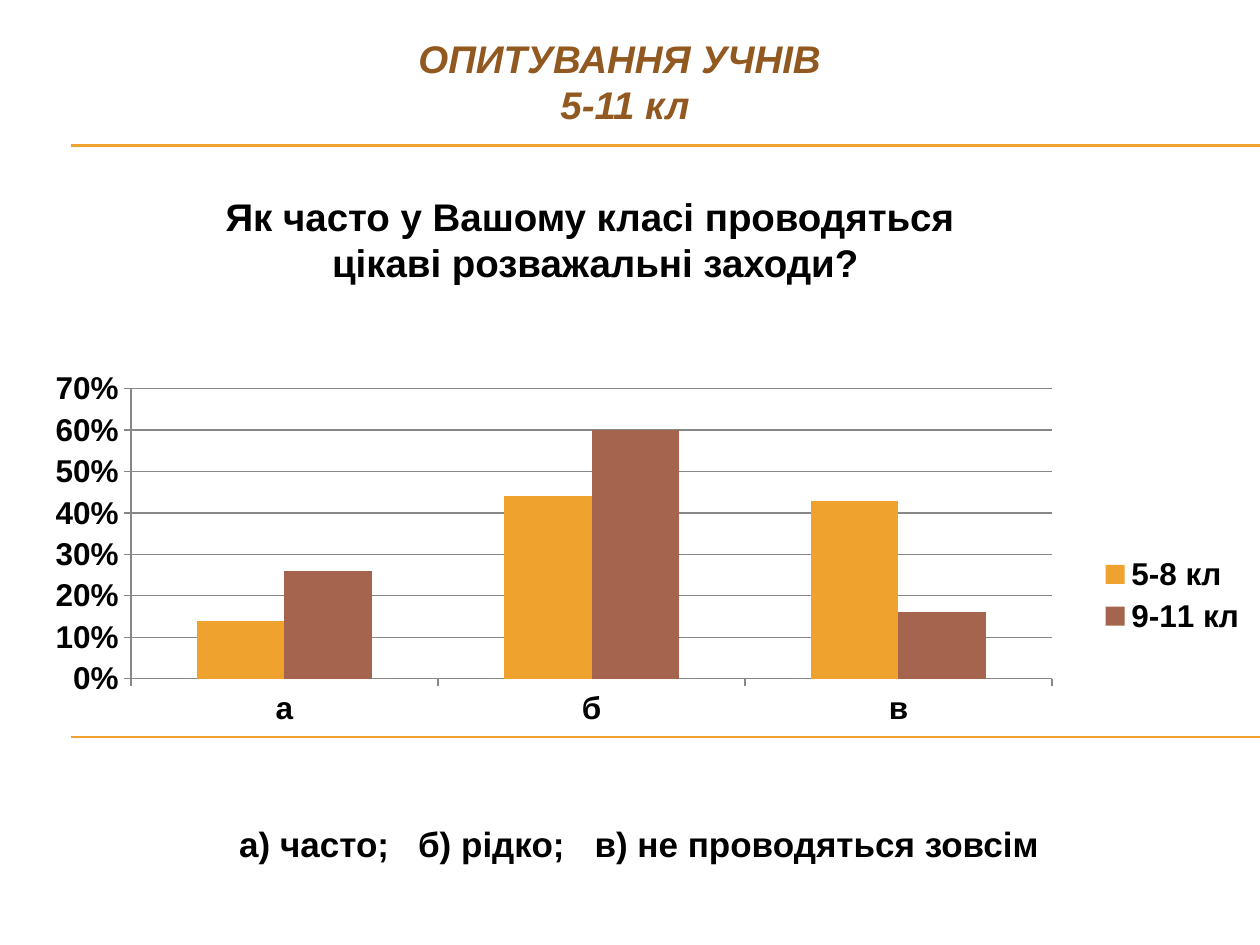
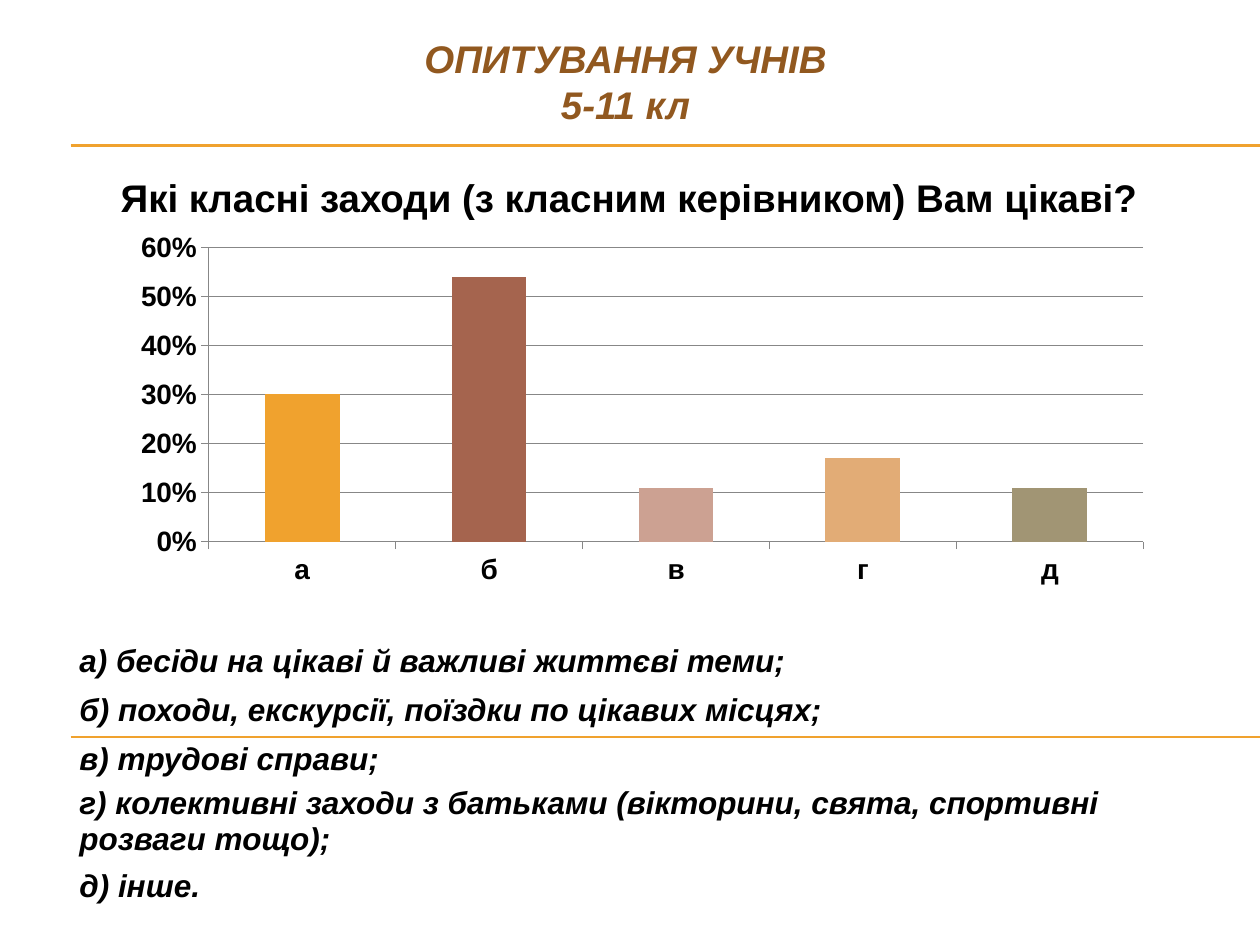
from lxml.etree import SubElement as Sub
from pptx import Presentation
from pptx.chart.data import CategoryChartData as Data
from pptx.dml.color import RGBColor as RGB
from pptx.enum.chart import XL_CHART_TYPE as Kind, XL_LEGEND_POSITION as Pos
from pptx.enum.chart import XL_TICK_MARK as Tick
from pptx.enum.shapes import MSO_CONNECTOR as Link
from pptx.enum.text import MSO_ANCHOR as Anchor, PP_ALIGN as Align
from pptx.oxml import parse_xml
from pptx.oxml.ns import nsdecls, qn
from pptx.util import Inches, Pt

HUE = {"gold": "F0A22E", "rust": "A5644E", "rose": "CCA192", "sand": "E2AC76",
       "moss": "A19574", "title": "91581F", "ink": "000000", "grid": "878787"}
FONT = "Arial"
BARE = "{2D5ABB26-0587-4C30-8999-92F81FD0307C}"


def style(font, size, hue="ink", slant=False):
    font.name, font.size = FONT, Pt(size)
    font.bold, font.italic = True, slant
    font.color.rgb = RGB.from_string(HUE[hue])


def write(slide, area, lines, size, hue="ink", slant=False, align=Align.CENTER):
    box = slide.shapes.add_textbox(*map(Inches, area))
    frame = box.text_frame
    frame.word_wrap = True
    for i, line in enumerate(lines):
        para = frame.add_paragraph() if i else frame.paragraphs[0]
        para.alignment = align
        run = para.add_run()
        run.text = line
        style(run.font, size, hue, slant)
    return frame


pages = [
    {"title": (2.5, 0.23, 4.92, 0.84), "head": "ОПИТУВАННЯ УЧНІВ ",
     "ask": (1.64, 1.48, 6.17, 0.84), "align": Align.CENTER,
     "lines": ["Як часто у Вашому класі проводяться ", "цікаві розважальні заходи?"],
     "chart": (0, 2.81, 10, 3.83), "plot": (0.104, 0.072, 0.731, 0.601),
     "cats": "абв", "top": 0.7, "size": 18,
     "series": [("5-8 кл", (0.14, 0.44, 0.43)), ("9-11 кл", (0.26, 0.6, 0.16))]},
    {"title": (2.58, 0.23, 4.77, 0.84), "head": "ОПИТУВАННЯ УЧНІВ",
     "ask": (0.86, 1.33, 8.83, 0.47), "align": Align.LEFT,
     "lines": ["Які класні заходи (з класним керівником) Вам цікаві?"],
     "chart": (0.31, 1.8, 8.98, 3.13), "plot": (0.15, 0.052, 0.826, 0.747),
     "cats": "абвгд", "top": 0.6, "size": 16,
     "series": [("Series 1", (0.3, 0.54, 0.11, 0.17, 0.11))]},
]
bars = ["gold", "rust", "rose", "sand", "moss"]

deck = Presentation()
deck.slide_width, deck.slide_height = Inches(10), Inches(7.5)
slides = []

for page in pages:
    slide = deck.slides.add_slide(deck.slide_layouts[6])
    slides.append(slide)

    # Gold rules
    for y in (1.15, 1.16, 5.85):
        rule = slide.shapes.add_connector(
            Link.STRAIGHT, Inches(0.56), Inches(y), Inches(10), Inches(y))
        rule.line.color.rgb = RGB.from_string(HUE["gold"])
        rule.line.width = Pt(0.75)
        Sub(rule._element.spPr, qn("a:effectLst"))

    # Title and question
    write(slide, page["title"], [page["head"], "5-11 кл"], 22, "title", True)
    write(slide, page["ask"], page["lines"], 22, align=page["align"])

    # Chart data
    data = Data(number_format="0%")
    data.categories = list(page["cats"])
    for name, vals in page["series"]:
        data.add_series(name, vals)
    chart = slide.shapes.add_chart(
        Kind.COLUMN_CLUSTERED, *map(Inches, page["chart"]), data).chart
    chart.has_title = False
    style(chart.font, page["size"])

    # Columns: one colour per series, or per point when there is one series
    plot = chart.plots[0]
    plot.gap_width = 150
    plot.vary_by_categories = False
    solo = len(plot.series) == 1
    for i, row in enumerate(plot.series):
        row.format.fill.solid()
        row.format.fill.fore_color.rgb = RGB.from_string(HUE[bars[i]])
        if solo:
            for j in range(1, len(page["cats"])):
                fill = row.points[j].format.fill
                fill.solid()
                fill.fore_color.rgb = RGB.from_string(HUE[bars[j]])

    # Axes and grid
    axis = chart.value_axis
    axis.minimum_scale, axis.maximum_scale = 0, page["top"]
    axis.major_unit = 0.1
    axis.tick_labels.number_format = "0%"
    axis.tick_labels.number_format_is_linked = False
    axis.has_major_gridlines = True
    for side in (axis, chart.category_axis):
        side.major_tick_mark = Tick.OUTSIDE
    for part in (axis, chart.category_axis, axis.major_gridlines):
        part.format.line.color.rgb = RGB.from_string(HUE["grid"])
        part.format.line.width = Pt(0.75)

    # Legend
    chart.has_legend = not solo
    if not solo:
        chart.legend.position = Pos.RIGHT
        chart.legend.include_in_layout = False
        style(chart.legend.font, page["size"])

    # Fixed inner plot area
    area = chart._chartSpace.chart.plotArea
    for old in area.findall(qn("c:layout")):
        area.remove(old)
    marks = '<c:layoutTarget val="inner"/><c:xMode val="edge"/><c:yMode val="edge"/>'
    marks += "".join(f'<c:{k} val="{v}"/>' for k, v in zip("xywh", page["plot"]))
    area.insert(0, parse_xml(
        f'<c:layout {nsdecls("c")}><c:manualLayout>{marks}</c:manualLayout></c:layout>'))

# Answer key of the first slide, spaced by tab stops
key = write(slides[0], (1.8, 6.48, 6.95, 0.44),
            ["а) часто;\tб) рідко;\tв) не проводяться зовсім"], 20, align=Align.LEFT)
tabs = Sub(key.paragraphs[0]._p.get_or_add_pPr(), qn("a:tabLst"))
for stop in (1.42, 2.82):
    Sub(tabs, qn("a:tab"), pos=str(Inches(stop)), algn="l")

# Answer table of the second slide
items = [
    (0.47, "а) бесіди на цікаві й важливі життєві теми;"),
    (0.39, "б) походи, екскурсії, поїздки по цікавих місцях;"),
    (0.39, "в) трудові справи;"),
    (0.63, "г) колективні заходи з батьками (вікторини, свята, спортивні розваги тощо);"),
    (0.38, "д) інше."),
]
table = slides[1].shapes.add_table(
    len(items), 1, Inches(0.62), Inches(4.92), Inches(8.44), Inches(2.26)).table
table.first_row = table.horz_banding = False
table._tbl.tblPr.find(qn("a:tableStyleId")).text = BARE
for i, (high, text) in enumerate(items):
    table.rows[i].height = Inches(high)
    cell = table.cell(i, 0)
    cell.fill.background()
    cell.vertical_anchor = Anchor.BOTTOM
    cell.margin_left = cell.margin_right = cell.margin_top = Inches(0.01)
    cell.margin_bottom = 0
    run = cell.text_frame.paragraphs[0].add_run()
    run.text = text
    style(run.font, 18, slant=True)

deck.save("out.pptx")
